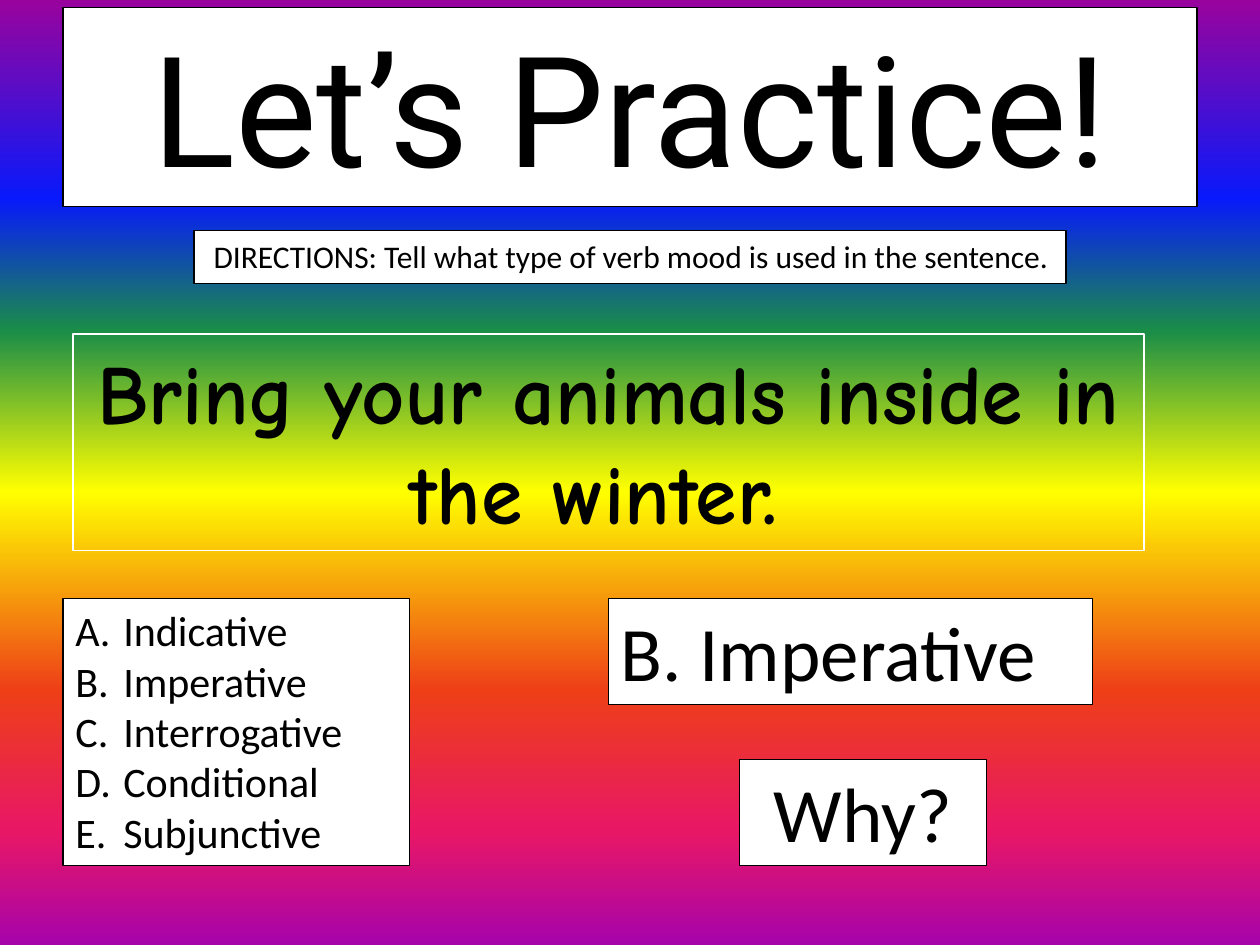
from dataclasses import dataclass

from lxml.etree import SubElement
from pptx import Presentation
from pptx.dml.color import RGBColor
from pptx.enum.shapes import MSO_SHAPE as Shape
from pptx.enum.text import MSO_ANCHOR as Anchor, MSO_AUTO_SIZE as AutoSize, PP_ALIGN as Align
from pptx.oxml.ns import qn
from pptx.util import Inches, Pt


@dataclass(frozen=True)
class Theme:
    black: str = "000000"
    white: str = "FFFFFF"
    rainbow: tuple = ((0, "99039D"), (21, "0819FB"), (35, "1A8D48"), (52, "FFFF00"),
                      (73, "EE3F17"), (88, "E81766"), (100, "A603AB"))
    body_font: str = "Calibri"
    title_font: str = "Roboto"
    sentence_font: str = "Comic Neue"
    title: int = 88
    sentence: int = 48
    answer: int = 44
    choices: int = 24
    directions: int = 18


THEME = Theme()


def paint_background(s, stops):
    """Vertical gradient with any number of (percent, colour) stops."""
    fill = s.background.fill
    fill.gradient()
    fill.gradient_angle = 270
    gs_list = next(s.element.iter(qn("a:gsLst")))
    for gs in list(gs_list):
        gs_list.remove(gs)
    for percent, color in stops:
        gs = SubElement(gs_list, qn("a:gs"), pos=str(percent * 1000))
        SubElement(gs, qn("a:srgbClr"), val=color)


def add_letter_bullet(p, indent=0.38):
    """Number the paragraph A., B., C. with a hanging indent."""
    pPr = p._p.get_or_add_pPr()
    pPr.set("marL", str(Inches(indent)))
    pPr.set("indent", str(-Inches(indent)))
    SubElement(pPr, qn("a:buFont"), typeface="+mj-lt")
    SubElement(pPr, qn("a:buAutoNum"), type="alphaUcPeriod")


def add_text_panel(s, box, *lines, size, font=THEME.body_font, bold=False, align=Align.LEFT,
                   fill=THEME.white, line=THEME.black, lettered=False):
    """Outlined rectangle with one paragraph per line of text."""
    sp = s.shapes.add_shape(Shape.RECTANGLE, *map(Inches, box))
    sp.shadow.inherit = False
    if fill:
        sp.fill.solid()
        sp.fill.fore_color.rgb = RGBColor.from_string(fill)
    else:
        sp.fill.background()
    sp.line.color.rgb = RGBColor.from_string(line)
    sp.line.width = Pt(0.75)

    tf = sp.text_frame
    tf.word_wrap = True
    tf.auto_size = AutoSize.SHAPE_TO_FIT_TEXT
    tf.vertical_anchor = Anchor.TOP
    for i, text in enumerate(lines):
        p = tf.paragraphs[0] if i == 0 else tf.add_paragraph()
        p.alignment = align
        if lettered:
            add_letter_bullet(p)
        r = p.add_run()
        r.text = text
        r.font.name = font
        r.font.size = Pt(size)
        r.font.bold = bold
        r.font.color.rgb = RGBColor.from_string(THEME.black)


def main():
    prs = Presentation()
    prs.slide_width, prs.slide_height = Inches(10), Inches(7.5)
    s = prs.slides.add_slide(prs.slide_layouts[6])
    paint_background(s, THEME.rainbow)

    # Heading and directions
    add_text_panel(s, (0.5, 0.06, 9, 1.58), "Let’s Practice!",
                   size=THEME.title, font=THEME.title_font, align=Align.CENTER)
    add_text_panel(s, (1.54, 1.83, 6.92, 0.42),
                   " DIRECTIONS: Tell what type of verb mood is used in the sentence.",
                   size=THEME.directions)

    # Practice sentence
    add_text_panel(s, (0.58, 2.65, 8.5, 1.72), "Bring your animals inside in the winter. ",
                   size=THEME.sentence, font=THEME.sentence_font, bold=True,
                   align=Align.CENTER, fill=None, line=THEME.white)

    # Choices
    add_text_panel(s, (0.5, 4.75, 2.75, 2.12), "Indicative", "Imperative", "Interrogative",
                   "Conditional", "Subjunctive", size=THEME.choices, lettered=True)

    # Answer and follow-up question
    add_text_panel(s, (4.83, 4.75, 3.84, 0.84), "B. Imperative", size=THEME.answer)
    add_text_panel(s, (5.87, 6.03, 1.96, 0.84), "Why?", size=THEME.answer, align=Align.CENTER)

    prs.save("out.pptx")


if __name__ == "__main__":
    main()
